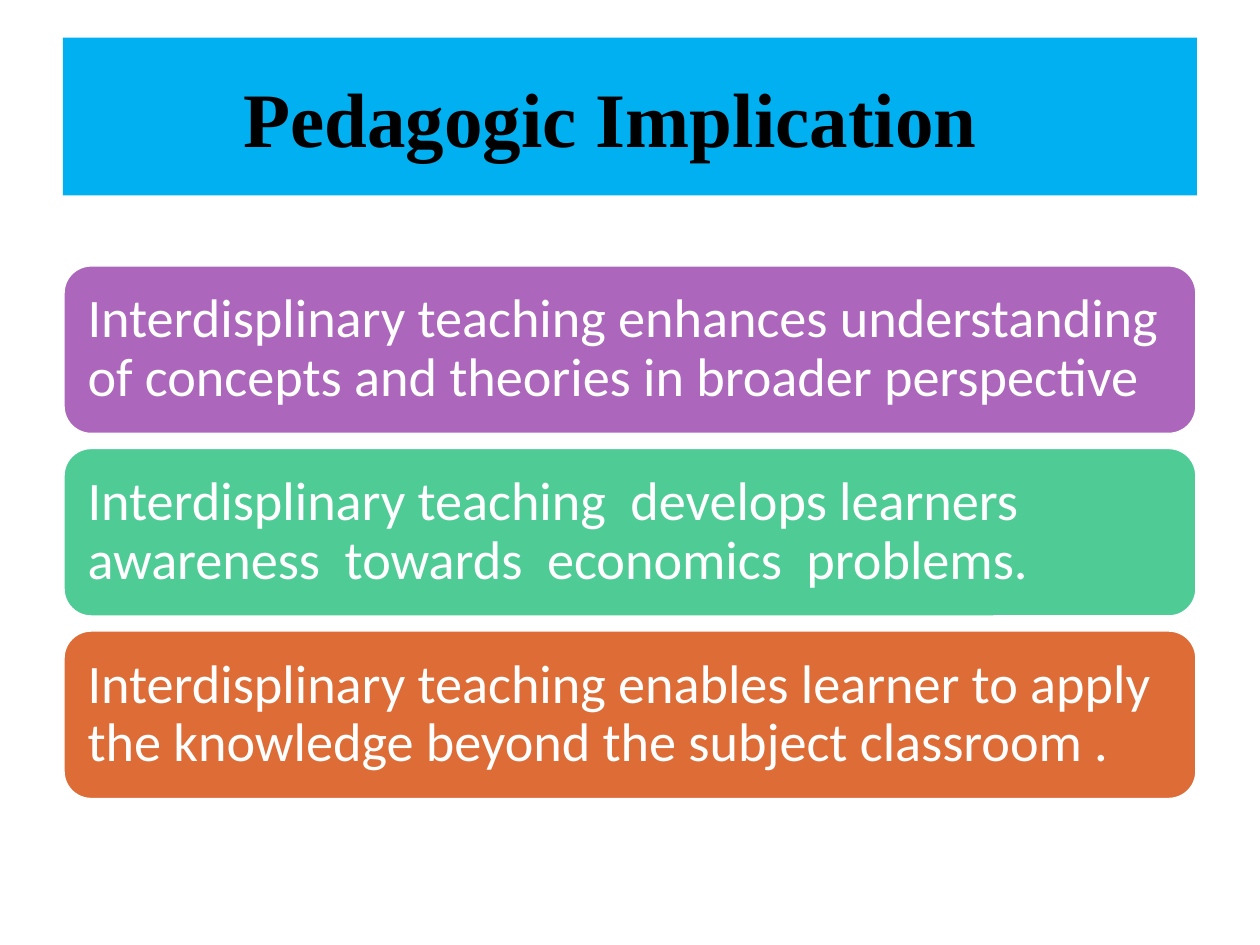
from dataclasses import dataclass
from pptx import Presentation
from pptx.dml.color import RGBColor
from pptx.enum.shapes import MSO_SHAPE
from pptx.enum.text import MSO_ANCHOR, PP_ALIGN
from pptx.util import Cm, Pt


@dataclass(frozen=True)
class Theme:
    banner: str = "00B0F0"
    ink: str = "000000"
    light: str = "FFFFFF"
    cards: tuple = ("AC66BB", "4FCC96", "DE6C36")
    head: int = 44
    body: int = 31
    serif: str = "Times New Roman"
    sans: str = "Calibri"


THEME = Theme()
TITLE = "Pedagogic Implication"
POINTS = (
    "Interdisplinary teaching enhances understanding of concepts and theories in broader perspective",
    "Interdisplinary teaching  develops learners awareness  towards  economics  problems.",
    "Interdisplinary teaching enables learner to apply the knowledge beyond the subject classroom .",
)


def add_panel(slide, kind, box, fill):
    panel = slide.shapes.add_shape(kind, *(Cm(side) for side in box))
    panel.shadow.inherit = False
    panel.fill.solid()
    panel.fill.fore_color.rgb = RGBColor.from_string(fill)
    panel.line.fill.background()
    frame = panel.text_frame
    frame.word_wrap = True
    frame.vertical_anchor = MSO_ANCHOR.MIDDLE
    return panel


def add_text(panel, text, font, size, color, align, bold=False):
    para = panel.text_frame.paragraphs[0]
    para.alignment = align
    run = para.add_run()
    run.text = text
    run.font.name = font
    run.font.size = Pt(size)
    run.font.bold = bold
    run.font.color.rgb = RGBColor.from_string(color)
    return para


def add_banner(slide, box):
    panel = add_panel(slide, MSO_SHAPE.RECTANGLE, box, THEME.banner)
    panel.text_frame.margin_right = Cm(1.04)
    add_text(panel, TITLE, THEME.serif, THEME.head, THEME.ink,
             PP_ALIGN.CENTER, bold=True)


def add_card(slide, box, text, fill):
    panel = add_panel(slide, MSO_SHAPE.ROUNDED_RECTANGLE, box, fill)
    panel.line.color.rgb = RGBColor.from_string(THEME.light)
    panel.line.width = Pt(2)
    frame = panel.text_frame
    frame.margin_left = frame.margin_right = Cm(0.33)
    frame.margin_top = frame.margin_bottom = Cm(0.33)
    para = add_text(panel, text, THEME.sans, THEME.body, THEME.light,
                    PP_ALIGN.LEFT)
    para.line_spacing = 0.9


def add_cards(slide, box, gap):
    left, top, width, height = box
    count = len(POINTS)
    tall = (height - gap * (count - 1)) / count
    for row, (text, fill) in enumerate(zip(POINTS, THEME.cards)):
        place = (left, top + row * (tall + gap), width, tall)
        add_card(slide, place, text, fill)


def main():
    deck = Presentation()
    deck.slide_width = Cm(25.4)
    deck.slide_height = Cm(19.05)
    slide = deck.slides.add_slide(deck.slide_layouts[6])
    add_banner(slide, (1.27, 0.76, 22.86, 3.18))
    add_cards(slide, (1.27, 5.34, 22.86, 10.78), 0.26)
    deck.save("out.pptx")


if __name__ == "__main__":
    main()
